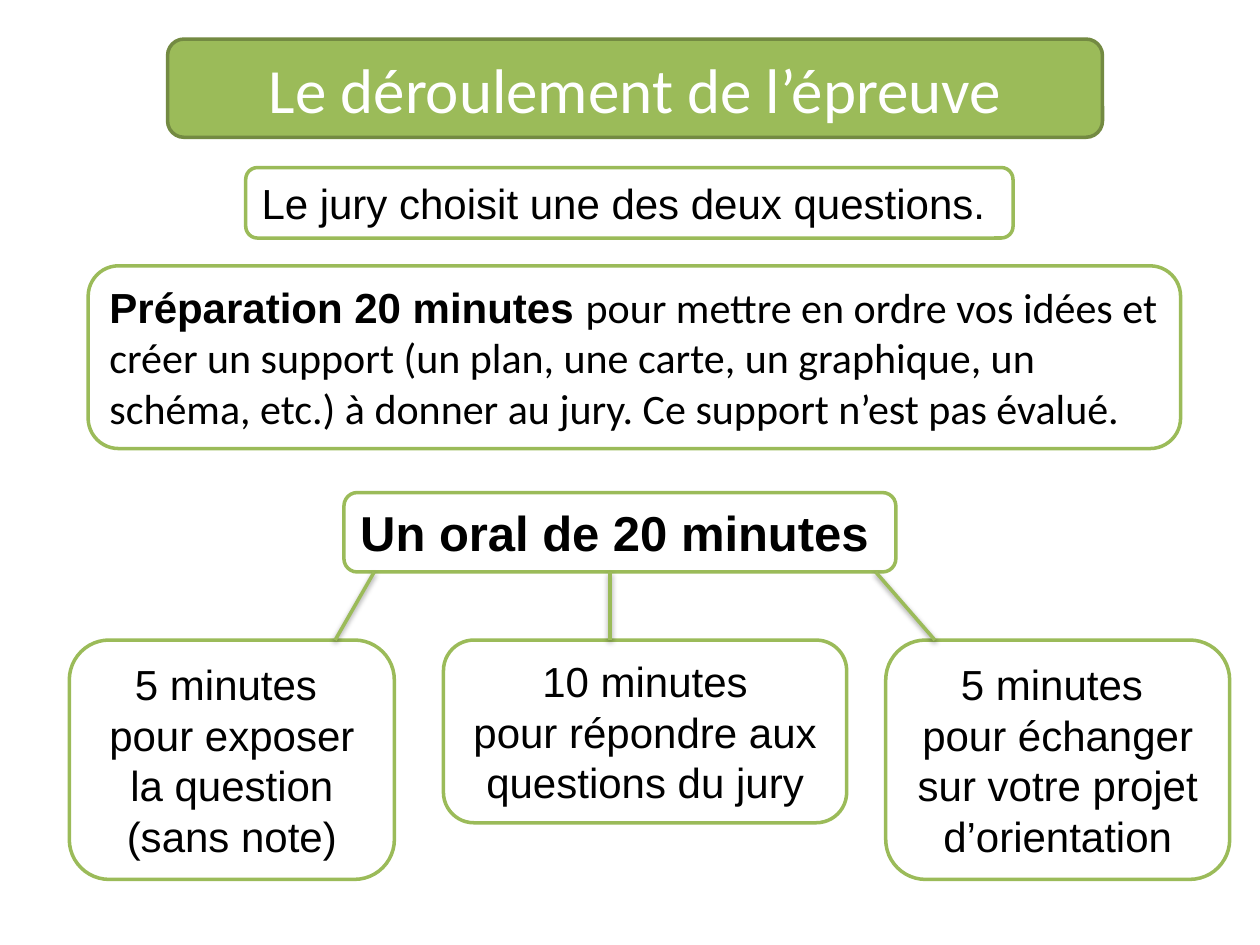
from lxml import etree
from pptx import Presentation
from pptx.dml.color import RGBColor
from pptx.enum.shapes import MSO_CONNECTOR, MSO_SHAPE
from pptx.enum.text import MSO_ANCHOR, MSO_AUTO_SIZE, PP_ALIGN
from pptx.oxml import parse_xml
from pptx.oxml.ns import nsdecls
from pptx.util import Inches, Pt

COLORS = {"green": "9BBB59", "dark_green": "738A42", "white": "FFFFFF", "black": "000000"}
LINE_WIDTH = Pt(2)


def rgb(name):
    return RGBColor.from_string(COLORS[name])


class SlideBuilder:
    """Draws the rounded boxes and branches of one slide."""

    def __init__(self, slide):
        self.slide = slide

    def box(self, left, top, width, height, paragraphs, size=24, align=PP_ALIGN.LEFT,
            fill="white", line="green", color="black"):
        """Each paragraph is a list of (text, font, bold) runs."""
        shape = self.slide.shapes.add_shape(
            MSO_SHAPE.ROUNDED_RECTANGLE,
            Inches(left), Inches(top), Inches(width), Inches(height))
        shape.shadow.inherit = False
        shape.fill.solid()
        shape.fill.fore_color.rgb = rgb(fill)
        shape.line.color.rgb = rgb(line)
        shape.line.width = LINE_WIDTH

        frame = shape.text_frame
        frame.word_wrap = True
        frame.auto_size = MSO_AUTO_SIZE.SHAPE_TO_FIT_TEXT
        frame.vertical_anchor = MSO_ANCHOR.MIDDLE
        for index, runs in enumerate(paragraphs):
            paragraph = frame.add_paragraph() if index else frame.paragraphs[0]
            paragraph.alignment = align
            for text, font, bold in runs:
                run = paragraph.add_run()
                run.text = text
                run.font.name = font
                run.font.size = Pt(size)
                run.font.bold = bold
                run.font.color.rgb = rgb(color)

    def branch(self, x1, y1, x2, y2):
        connector = self.slide.shapes.add_connector(
            MSO_CONNECTOR.STRAIGHT, Inches(x1), Inches(y1), Inches(x2), Inches(y2))
        connector.line.color.rgb = rgb("green")
        connector.line.width = LINE_WIDTH
        # Soft shadow falling straight down
        effects = parse_xml(f"<a:effectLst {nsdecls('a')}/>")
        shadow = etree.SubElement(
            effects, "{%s}outerShdw" % effects.nsmap["a"],
            blurRad=str(Pt(3.1)), dist=str(Pt(1.6)), dir="5400000", rotWithShape="0")
        tint = etree.SubElement(shadow, "{%s}srgbClr" % effects.nsmap["a"], val=COLORS["black"])
        etree.SubElement(tint, "{%s}alpha" % effects.nsmap["a"], val="38000")
        connector._element.spPr.append(effects)


def main():
    prs = Presentation()
    prs.slide_width, prs.slide_height = Inches(10), Inches(7.5)
    builder = SlideBuilder(prs.slides.add_slide(prs.slide_layouts[6]))

    # Title
    builder.box(1.33, 0.31, 7.42, 0.78, [[("Le déroulement de l’épreuve", "Calibri", False)]],
                size=36, align=PP_ALIGN.CENTER, fill="green", line="dark_green", color="white")

    # Choice of the question, then preparation
    builder.box(1.95, 1.33, 6.09, 0.56,
                [[("Le jury choisit une des deux questions.", "Arial", False)]])
    builder.box(0.7, 2.11, 8.67, 1.45, [[
        ("Préparation 20 minutes ", "Arial", True),
        ("pour mettre en ordre vos idées et créer un support (un plan, une carte, "
         "un graphique, un schéma, etc.) à donner au jury. Ce support n’est pas évalué.",
         "Calibri", False)]])

    # Oral exam
    oral_top, oral_height = 3.91, 0.63
    builder.box(2.73, oral_top, 4.38, oral_height,
                [[("Un oral de 20 minutes", "Arial", True)]], size=28)

    # Three parts of the oral: left, width, height, texts, branch start x, branch end x
    parts_top = 5.08
    oral_parts = [
        (0.55, 2.58, 1.9, ("5 minutes ", "pour exposer la question (sans note)"), 2.97, 2.66),
        (3.52, 3.2, 1.45, ("10 minutes", "pour répondre aux questions du jury"), 4.84, 4.84),
        (7.03, 2.73, 1.9, ("5 minutes ", "pour échanger sur votre projet d’orientation"),
         6.95, 7.42),
    ]
    for left, width, height, texts, start_x, end_x in oral_parts:
        builder.box(left, parts_top, width, height,
                    [[(text, "Arial", False)] for text in texts], align=PP_ALIGN.CENTER)
        builder.branch(start_x, oral_top + oral_height, end_x, parts_top)

    prs.save("out.pptx")


if __name__ == "__main__":
    main()
